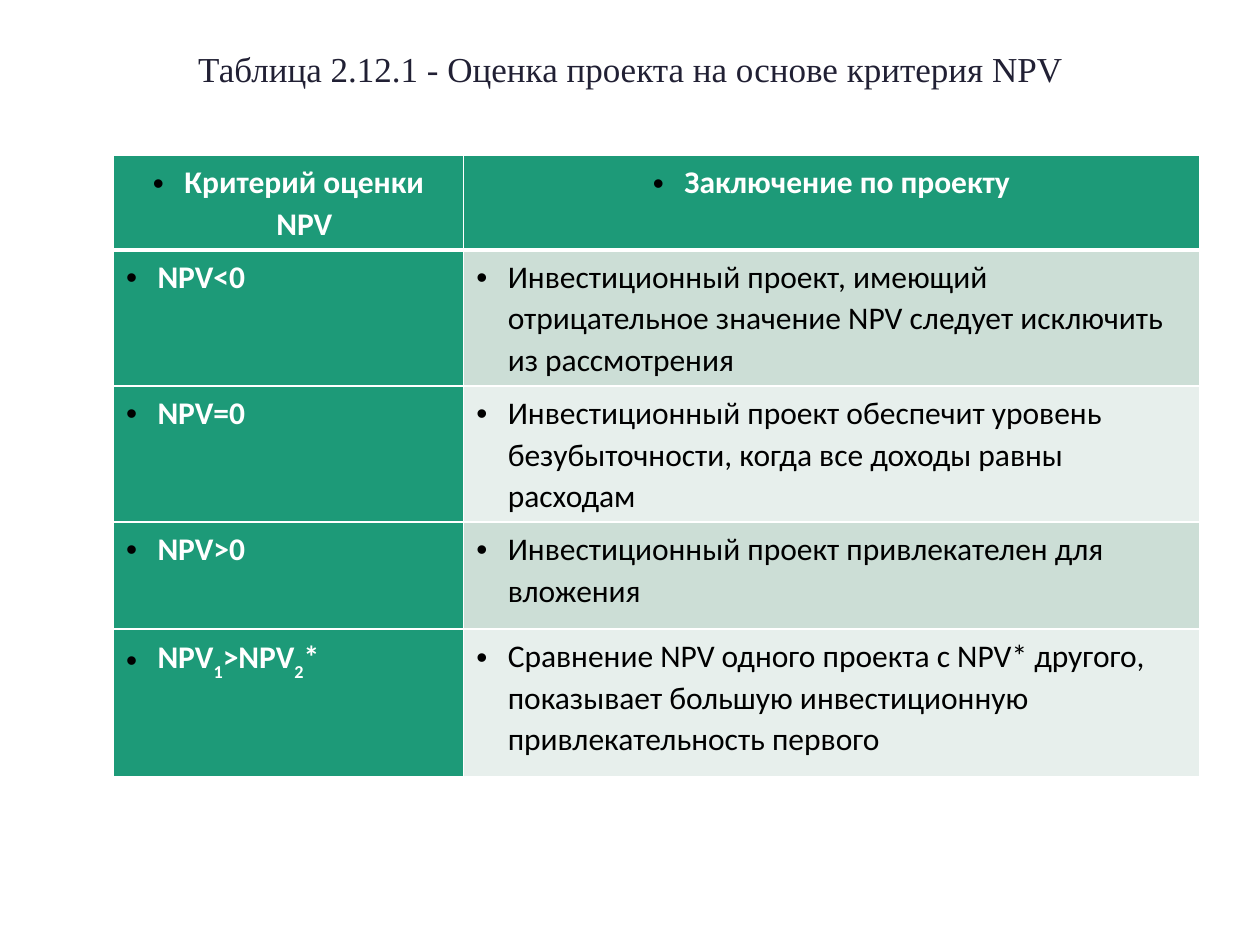
from lxml.etree import SubElement
from pptx import Presentation
from pptx.dml.color import RGBColor
from pptx.enum.text import MSO_ANCHOR as Anchor, PP_ALIGN as Align
from pptx.oxml.ns import qn
from pptx.util import Inches, Pt

WHITE = RGBColor(0xFF, 0xFF, 0xFF)
BLACK = RGBColor(0, 0, 0)
INK = RGBColor(0x21, 0x20, 0x34)
GREEN = RGBColor(0x1D, 0x9A, 0x78)
BANDS = (RGBColor(0xCC, 0xDE, 0xD6), RGBColor(0xE7, 0xEF, 0xEC))

TITLE = "Таблица 2.12.1 - Оценка проекта на основе критерия NPV"
COLUMNS = (2.78, 5.84)
HEIGHTS = (0.53, 0.85, 0.85, 0.85, 1.17)
# Cells are lists of text pieces; every second piece is a subscript
ROWS = (
    (["Критерий оценки NPV"], ["Заключение по проекту"]),
    (["NPV<0"], ["Инвестиционный проект, имеющий отрицательное значение NPV "
                 "следует исключить из рассмотрения"]),
    (["NPV=0"], ["Инвестиционный проект обеспечит уровень безубыточности, "
                 "когда все доходы равны расходам"]),
    (["NPV>0"], ["Инвестиционный проект привлекателен для вложения"]),
    (["NPV", "1", ">NPV", "2", "*"],
     ["Сравнение NPV одного проекта с NPV* другого, показывает большую "
      "инвестиционную привлекательность первого"]),
)


class SlideBuilder:
    title_format = {"name": "Times New Roman", "size": Pt(20)}
    table_format = {"name": "Calibri", "size": Pt(18)}

    def __init__(self, deck):
        self.page = deck.slides.add_slide(deck.slide_layouts[6])

    def span(self, para, text, color, values):
        span = para.add_run()
        span.text = text
        for name, value in values.items():
            setattr(span.font, name, value)
        span.font.color.rgb = color
        return span

    def title(self, text, left, top, width, height):
        box = self.page.shapes.add_textbox(*map(Inches, (left, top, width, height)))
        frame = box.text_frame
        frame.word_wrap = True
        frame.vertical_anchor = Anchor.MIDDLE
        para = frame.paragraphs[0]
        para.alignment = Align.CENTER
        self.span(para, text, INK, self.title_format)

    def bullet(self, para):
        props = para._p.get_or_add_pPr()
        props.set("marL", str(Inches(0.25)))
        props.set("indent", str(-Inches(0.25)))
        color = SubElement(props, qn("a:buClr"))
        SubElement(color, qn("a:srgbClr"), val=str(BLACK))
        SubElement(props, qn("a:buFont"), typeface="Arial")
        SubElement(props, qn("a:buChar"), char="•")

    def borders(self, cell, widths):
        props = cell._tc.get_or_add_tcPr()
        for side, width in widths.items():
            line = SubElement(props, qn(f"a:ln{side}"), w=str(Pt(width)))
            fill = SubElement(line, qn("a:solidFill"))
            SubElement(fill, qn("a:srgbClr"), val=str(WHITE))

    def cell(self, cell, pieces, row, column):
        is_head = row == 0 or column == 0
        self.borders(cell, {"L": 1, "R": 1, "T": 3 if row == 1 else 1,
                            "B": 3 if row == 0 else 1})
        cell.fill.solid()
        cell.fill.fore_color.rgb = GREEN if is_head else BANDS[(row - 1) % 2]
        para = cell.text_frame.paragraphs[0]
        para.alignment = Align.CENTER if row == 0 else Align.LEFT
        para.line_spacing = 1.07
        self.bullet(para)
        values = {**self.table_format, "bold": is_head}
        for index, piece in enumerate(pieces):
            span = self.span(para, piece, WHITE if is_head else BLACK, values)
            if index % 2:
                span._r.get_or_add_rPr().set("baseline", "-32000")

    def table(self, rows, left, top, columns, heights):
        area = map(Inches, (left, top, sum(columns), sum(heights)))
        table = self.page.shapes.add_table(len(rows), len(columns), *area).table
        for column, width in zip(table.columns, columns):
            column.width = Inches(width)
        for row, height in zip(table.rows, heights):
            row.height = Inches(height)
        for r, row in enumerate(rows):
            for c, pieces in enumerate(row):
                self.cell(table.cell(r, c), pieces, r, c)


def main():
    deck = Presentation()
    deck.slide_width, deck.slide_height = Inches(10), Inches(7.5)
    slide = SlideBuilder(deck)
    # Criteria table
    slide.table(ROWS, 0.9, 1.23, COLUMNS, HEIGHTS)
    # Heading
    slide.title(TITLE, 1.44, 0.32, 7.13, 0.44)
    deck.save("out.pptx")


if __name__ == "__main__":
    main()
